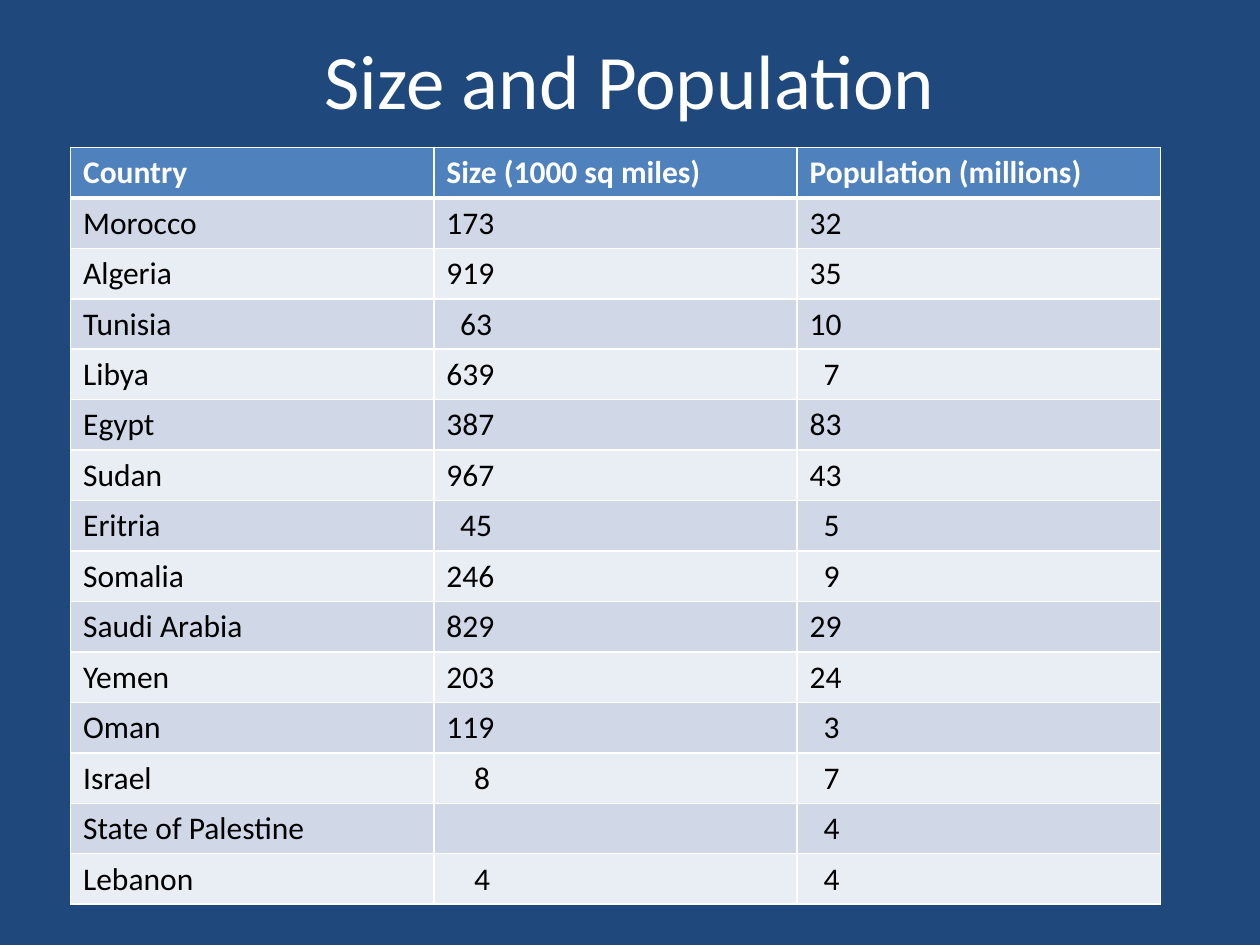
import dataclasses

import pptx
import pptx.dml.color
import pptx.enum.text
import pptx.oxml
import pptx.oxml.ns
import pptx.util
from pptx.util import Inches

FONT = "Calibri"
WHITE = "FFFFFF"
HEADER_FILL = "4F81BD"
BAND_FILLS = ("D0D8E8", "E9EDF4")
HEADINGS = ("Country", "Size (1000 sq miles)", "Population (millions)")
CELL_MARGIN = 0.1
DIGIT_INDENT = 0.11
ROW_HEIGHT = 0.4


@dataclasses.dataclass(frozen=True)
class Country:
    name: str
    size: str
    population: str


@dataclasses.dataclass(frozen=True)
class CellStyle:
    fill: str
    text: str
    bold: bool
    top: float
    bottom: float


COUNTRIES = (
    Country("Morocco", "173", "32"),
    Country("Algeria", "919", "35"),
    Country("Tunisia", "63", "10"),
    Country("Libya", "639", "7"),
    Country("Egypt", "387", "83"),
    Country("Sudan", "967", "43"),
    Country("Eritria", "45", "5"),
    Country("Somalia", "246", "9"),
    Country("Saudi Arabia", "829", "29"),
    Country("Yemen", "203", "24"),
    Country("Oman", "119", "3"),
    Country("Israel", "8", "7"),
    Country("State of Palestine", "", "4"),
    Country("Lebanon", "4", "4"),
)


def color(value: str) -> pptx.dml.color.RGBColor:
    return pptx.dml.color.RGBColor.from_string(value)


def style_font(paragraph, size: float, text_color: str, bold: bool = False) -> None:
    font = paragraph.font
    font.name = FONT
    font.size = pptx.util.Pt(size)
    font.bold = bold
    font.color.rgb = color(text_color)


def add_borders(cell, style: CellStyle) -> None:
    properties = cell._tc.get_or_add_tcPr()
    for side, width in (("L", 1), ("R", 1), ("T", style.top), ("B", style.bottom)):
        properties.append(pptx.oxml.parse_xml(
            f'<a:ln{side} {pptx.oxml.ns.nsdecls("a")} w="{pptx.util.Pt(width)}">'
            f'<a:solidFill><a:srgbClr val="{WHITE}"/></a:solidFill></a:ln{side}>'
        ))


def fill_cell(cell, text: str, style: CellStyle, indent: float = 0) -> None:
    cell.text = text
    cell.margin_left = Inches(CELL_MARGIN + indent)
    style_font(cell.text_frame.paragraphs[0], 18, style.text, style.bold)
    add_borders(cell, style)
    cell.fill.solid()
    cell.fill.fore_color.rgb = color(style.fill)


def add_title(page, text: str) -> None:
    box = page.shapes.add_textbox(Inches(0.5), Inches(0), Inches(9), Inches(1.25))
    frame = box.text_frame
    frame.word_wrap = True
    frame.vertical_anchor = pptx.enum.text.MSO_ANCHOR.MIDDLE
    paragraph = frame.paragraphs[0]
    paragraph.text = text
    paragraph.alignment = pptx.enum.text.PP_ALIGN.CENTER
    style_font(paragraph, 44, WHITE)


def add_country_table(page) -> None:
    row_count = len(COUNTRIES) + 1
    table = page.shapes.add_table(
        row_count, len(HEADINGS), Inches(0.56), Inches(1.17),
        Inches(8.65), Inches(ROW_HEIGHT * row_count),
    ).table
    header = CellStyle(HEADER_FILL, WHITE, True, 1, 3)
    for column, heading in enumerate(HEADINGS):
        fill_cell(table.cell(0, column), heading, header)
    for row, country in enumerate(COUNTRIES, start=1):
        band = BAND_FILLS[(row - 1) % 2]
        style = CellStyle(band, "000000", False, 3 if row == 1 else 1, 1)
        fill_cell(table.cell(row, 0), country.name, style)
        for column, value, digits in ((1, country.size, 3), (2, country.population, 2)):
            indent = DIGIT_INDENT * (digits - len(value)) if value else 0
            fill_cell(table.cell(row, column), value, style, indent)


def main() -> None:
    """Build the slide that compares countries by size and population."""
    deck = pptx.Presentation()
    deck.slide_width, deck.slide_height = Inches(10), Inches(7.5)
    page = deck.slides.add_slide(deck.slide_layouts[6])
    page.background.fill.solid()
    page.background.fill.fore_color.rgb = color("1F497D")
    add_title(page, "Size and Population")
    add_country_table(page)
    deck.save("out.pptx")


if __name__ == "__main__":
    main()
